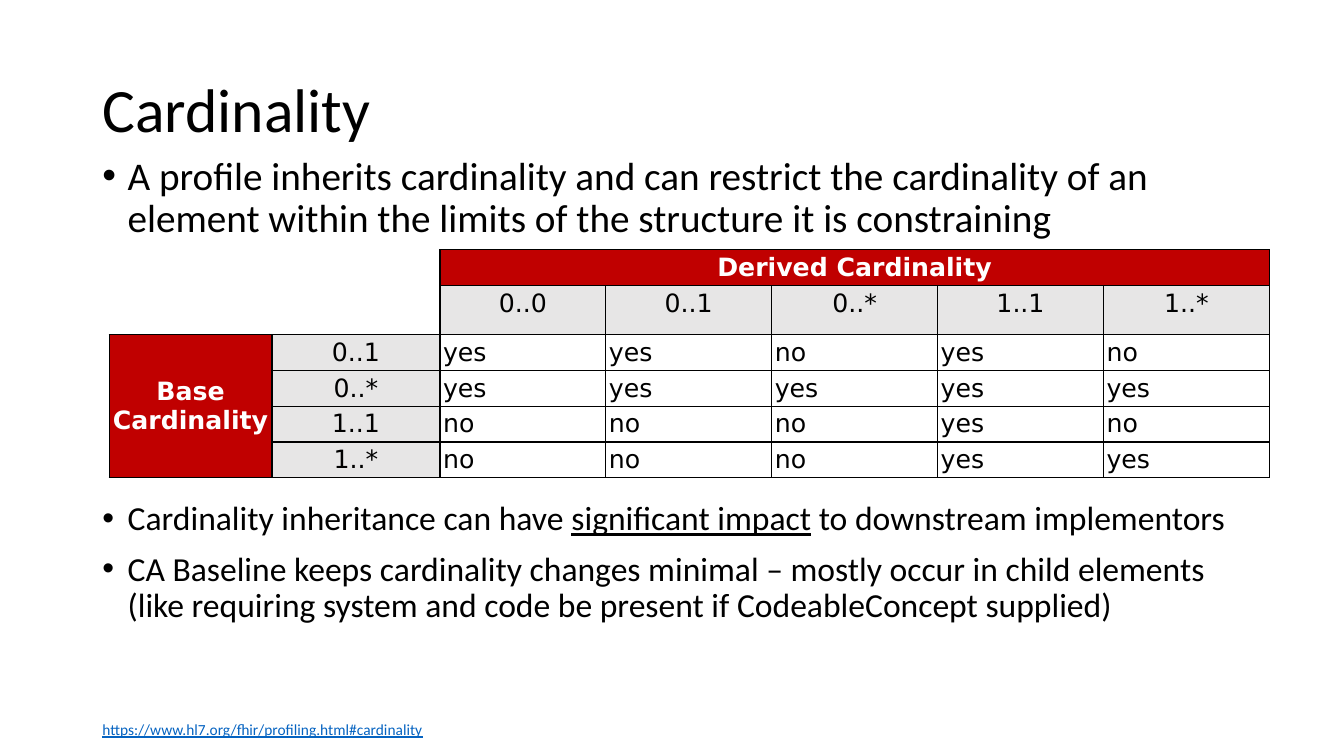
import dataclasses

import lxml.etree
import pptx
import pptx.dml.color
import pptx.enum.text
import pptx.oxml.ns
import pptx.util

PX = 9525  # EMU in one px, 96 px to the inch
ALIGN = pptx.enum.text.PP_ALIGN
ANCHOR = pptx.enum.text.MSO_ANCHOR


@dataclasses.dataclass(frozen=True)
class Theme:
    body_font: str = "Calibri"
    table_font: str = "DejaVu Sans"
    ink: str = "000000"
    paper: str = "FFFFFF"
    accent: str = "C00000"
    shade: str = "E7E6E6"
    link: str = "0563C1"
    title_size: int = 44
    lead_size: int = 28
    point_size: int = 24
    table_size: int = 18
    source_size: int = 11


THEME = Theme()

DERIVED = ["0..0", "0..1", "0..*", "1..1", "1..*"]
ALLOWED = {
    "0..1": ["yes", "yes", "no", "yes", "no"],
    "0..*": ["yes", "yes", "yes", "yes", "yes"],
    "1..1": ["no", "no", "no", "yes", "no"],
    "1..*": ["no", "no", "no", "yes", "yes"],
}
LEAD = [[("A profile inherits cardinality and can restrict the cardinality of an "
          "element within the limits of the structure it is constraining", False)]]
POINTS = [
    [("Cardinality inheritance can have ", False), ("significant impact", True),
     (" to downstream implementors", False)],
    [("CA Baseline keeps cardinality changes minimal – mostly occur in child elements "
      "(like requiring system and code be present if CodeableConcept supplied)", False)],
]


def rgb(code):
    return pptx.dml.color.RGBColor.from_string(code)


def px(*lengths):
    return [pptx.util.Emu(length * PX) for length in lengths]


def write(para, text, *, size, font=THEME.body_font, color=THEME.ink,
          bold=False, underline=False, align=ALIGN.LEFT):
    para.alignment = align
    span = para.add_run()
    span.text = text
    span.font.size = pptx.util.Pt(size)
    span.font.name = font
    span.font.color.rgb = rgb(color)
    span.font.bold = bold
    span.font.underline = underline


def place(shape, box):
    shape.left, shape.top, shape.width, shape.height = px(*box)
    shape.text_frame.word_wrap = True
    shape.text_frame.auto_size = pptx.enum.text.MSO_AUTO_SIZE.NONE


def add_title(holder, box, text):
    place(holder, box)
    holder.text_frame.vertical_anchor = ANCHOR.MIDDLE
    para = holder.text_frame.paragraphs[0]
    para.line_spacing = 0.9
    write(para, text, size=THEME.title_size)


def add_bullets(holder, box, items, size):
    """Fill a body placeholder with items made of (text, underline) spans."""
    place(holder, box)
    frame = holder.text_frame
    for number, item in enumerate(items):
        para = frame.add_paragraph() if number else frame.paragraphs[0]
        para.line_spacing = 0.9
        para.space_before = pptx.util.Pt(10)
        for text, underline in item:
            write(para, text, size=size, underline=underline)
        props = para._p.get_or_add_pPr()
        props.set("marL", str(24 * PX))
        props.set("indent", str(-24 * PX))
        bullet = lxml.etree.SubElement(props, pptx.oxml.ns.qn("a:buChar"))
        bullet.set("char", "•")


def set_borders(cell, sides):
    """Draw the named sides as thin lines and clear the other ones."""
    props = cell._tc.get_or_add_tcPr()
    for place_in_order, side in enumerate("LRTB"):
        line = lxml.etree.Element(pptx.oxml.ns.qn("a:ln" + side), w=str(pptx.util.Pt(1)))
        if side in sides:
            fill = lxml.etree.SubElement(line, pptx.oxml.ns.qn("a:solidFill"))
            lxml.etree.SubElement(fill, pptx.oxml.ns.qn("a:srgbClr"), val=THEME.ink)
        else:
            lxml.etree.SubElement(line, pptx.oxml.ns.qn("a:noFill"))
        props.insert(place_in_order, line)


def format_cell(cell, text, *, fill, margin=3, **text_format):
    cell.margin_left, cell.margin_right, cell.margin_top, cell.margin_bottom = px(*[margin] * 4)
    if fill:
        cell.fill.solid()
        cell.fill.fore_color.rgb = rgb(fill)
    else:
        cell.fill.background()
    write(cell.text_frame.paragraphs[0], text, size=THEME.table_size,
          font=THEME.table_font, **text_format)


def add_cardinality_table(page, box):
    rows = [["", "", "Derived Cardinality", "", "", "", ""], ["", "", *DERIVED]]
    rows += [["", base, *answers] for base, answers in ALLOWED.items()]
    rows[2][0] = "Base Cardinality"
    frame = page.shapes.add_table(len(rows), len(rows[0]), *px(*box))
    table = frame.table
    table.first_row = table.horz_banding = False
    for column, width in zip(table.columns, px(155, 160, *[158] * len(DERIVED))):
        column.width = width
    for row, height in zip(table.rows, px(34, 47, *[34] * len(ALLOWED))):
        row.height = height

    heading = {"fill": THEME.accent, "color": THEME.paper, "bold": True, "align": ALIGN.CENTER}
    label = {"fill": THEME.shade, "align": ALIGN.CENTER}
    for r, row in enumerate(rows):
        for c, text in enumerate(row):
            cell = table.cell(r, c)
            sides = "LRTB"
            if r < 2 and c < 2:
                look = {"fill": None, "margin": 0}
                sides = ("R" if c == 1 else "") + ("B" if r == 1 else "")
            elif r == 0 or c == 0:
                look = heading
            elif r == 1 or c == 1:
                look = label
            else:
                look = {"fill": THEME.paper}
            format_cell(cell, text, **look)
            set_borders(cell, sides)
    table.cell(0, 0).merge(table.cell(1, 0))
    table.cell(0, 2).merge(table.cell(0, len(rows[0]) - 1))
    table.cell(2, 0).merge(table.cell(len(rows) - 1, 0))
    table.cell(2, 0).vertical_anchor = ANCHOR.MIDDLE


def add_source(page, box, text):
    source = page.shapes.add_textbox(*px(*box))
    place(source, box)
    write(source.text_frame.paragraphs[0], text, size=THEME.source_size,
          color=THEME.link, underline=True)


def add_cardinality_page(deck):
    page = deck.slides.add_slide(deck.slide_layouts.get_by_name("Two Content"))
    title, lead, points = list(page.placeholders)[:3]
    left, width = 88, 1104
    add_bullets(lead, (left, 144, width, 95), LEAD, THEME.lead_size)
    add_title(title, (left, 38, width, 139), "Cardinality")
    add_cardinality_table(page, (104, 238, 1105, 217))
    add_bullets(points, (left, 473, width, 200), POINTS, THEME.point_size)
    add_source(page, (left, 681, 643, 28), "https://www.hl7.org/fhir/profiling.html#cardinality")


def main():
    deck = pptx.Presentation()
    deck.slide_width, deck.slide_height = px(1280, 720)
    add_cardinality_page(deck)
    deck.save("out.pptx")


if __name__ == "__main__":
    main()
